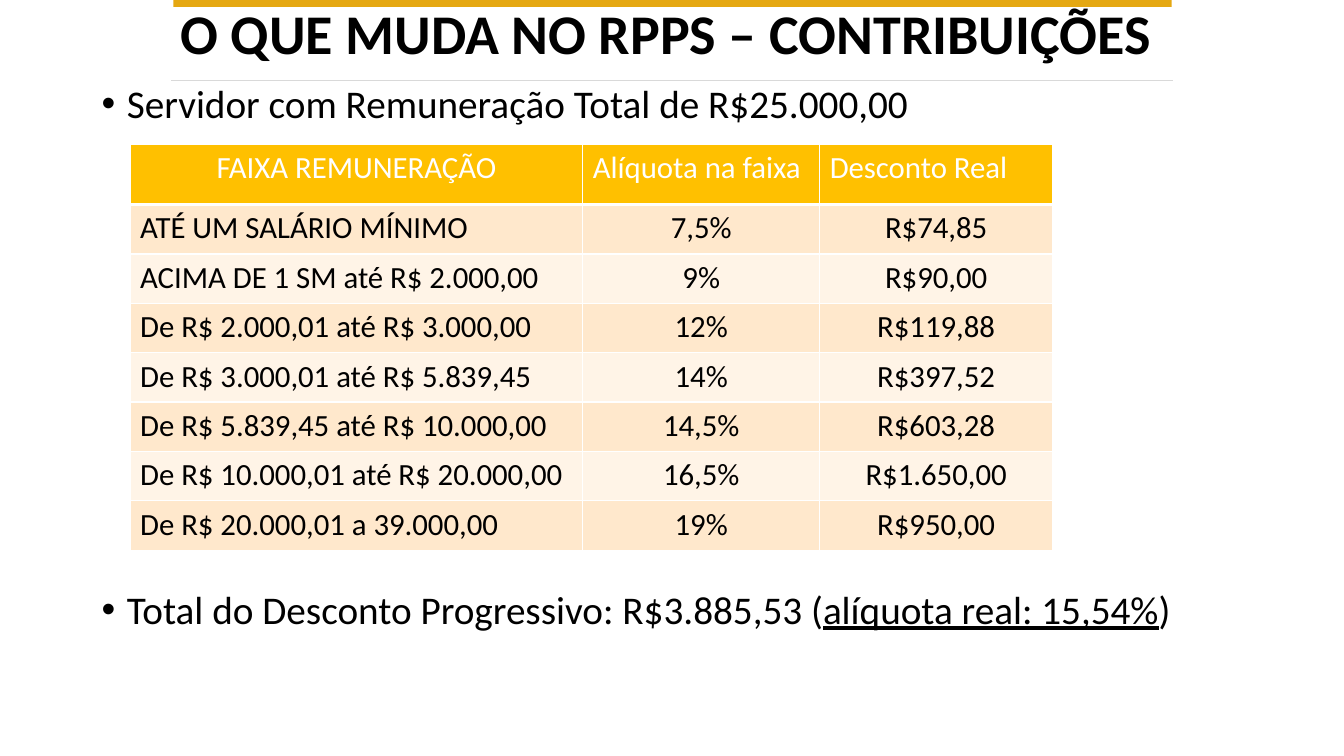
from dataclasses import dataclass

from lxml import etree
from pptx import Presentation
from pptx.dml.color import RGBColor
from pptx.enum.shapes import MSO_CONNECTOR, MSO_SHAPE
from pptx.enum.text import MSO_ANCHOR, PP_ALIGN
from pptx.oxml.ns import qn
from pptx.util import Emu, Inches, Pt

CENTER, LEFT = PP_ALIGN.CENTER, PP_ALIGN.LEFT
TOP = MSO_ANCHOR.TOP
RECTANGLE = MSO_SHAPE.RECTANGLE
STRAIGHT = MSO_CONNECTOR.STRAIGHT


@dataclass(frozen=True)
class Theme:
    font: str = "Calibri"
    title_size: int = 40
    body_size: int = 28
    table_size: int = 22
    text: str = "000000"
    white: str = "FFFFFF"
    accent: str = "E5A812"
    rule: str = "D9D9D9"
    header: str = "FFC000"
    bands: tuple[str, str] = ("FFE8CC", "FFF4E7")


@dataclass(frozen=True)
class Bracket:
    salary_range: str
    rate: str
    discount: str


THEME = Theme()
HEADINGS = Bracket("FAIXA REMUNERAÇÃO", "Alíquota na faixa", "Desconto Real")
BRACKETS = [
    Bracket("ATÉ UM SALÁRIO MÍNIMO", "7,5%", "R$74,85"),
    Bracket("ACIMA DE 1 SM até R$ 2.000,00", "9%", "R$90,00"),
    Bracket("De R$ 2.000,01 até R$ 3.000,00", "12%", "R$119,88"),
    Bracket("De R$ 3.000,01 até R$ 5.839,45", "14%", "R$397,52"),
    Bracket("De R$ 5.839,45 até R$ 10.000,00", "14,5%", "R$603,28"),
    Bracket("De R$ 10.000,01 até R$ 20.000,00", "16,5%", "R$1.650,00"),
    Bracket("De R$ 20.000,01 a 39.000,00", "19%", "R$950,00"),
]
COLUMN_WIDTHS = (4.49, 2.35, 2.31)
HEADER_HEIGHT, ROW_HEIGHT = 0.6, 0.49


def add_span(para, text: str, *, size: int, color: str = THEME.text,
             bold: bool = False, underline: bool = False) -> None:
    span = para.add_run()
    span.text = text
    font = span.font
    font.name, font.size = THEME.font, Pt(size)
    font.bold, font.underline = bold, underline
    font.color.rgb = RGBColor.from_string(color)


def add_text_frame(page, left: float, top: float, width: float, height: float):
    box = page.shapes.add_textbox(Inches(left), Inches(top), Inches(width), Inches(height))
    frame = box.text_frame
    frame.word_wrap = True
    frame.vertical_anchor = TOP
    return frame


def make_bullet(para) -> None:
    properties = para._p.get_or_add_pPr()
    properties.set("marL", str(Inches(0.25)))
    properties.set("indent", str(Inches(-0.25)))
    font = etree.SubElement(properties, qn("a:buFont"))
    font.set("typeface", "Arial")
    etree.SubElement(properties, qn("a:buChar")).set("char", "•")
    para.line_spacing = 0.9


def add_title_band(page) -> None:
    bar = page.shapes.add_shape(RECTANGLE, Inches(1.72), Emu(0), Inches(9.9), Inches(0.07))
    bar.shadow.inherit = False
    bar.fill.solid()
    bar.fill.fore_color.rgb = RGBColor.from_string(THEME.accent)
    bar.line.fill.background()

    rule = page.shapes.add_connector(
        STRAIGHT, Inches(1.7), Inches(0.8), Inches(11.63), Inches(0.8))
    rule.line.color.rgb = RGBColor.from_string(THEME.rule)
    rule.line.width = Pt(0.5)
    etree.SubElement(rule._element.spPr, qn("a:effectLst"))

    para = add_text_frame(page, 0.4, 0.01, 12.53, 0.89).paragraphs[0]
    para.alignment = CENTER
    para.line_spacing = 0.9
    add_span(para, "O QUE MUDA NO RPPS – CONTRIBUIÇÕES ", size=THEME.title_size, bold=True)


def add_body(page) -> None:
    """Write the bullets above and below the table as one text."""
    frame = add_text_frame(page, 0.91, 0.79, 11.22, 5.79)
    salary, total = frame.paragraphs[0], frame.add_paragraph()
    for para in (salary, total):
        make_bullet(para)
    total.space_before = Pt(331)
    size = THEME.body_size
    add_span(salary, "Servidor com Remuneração Total de R$25.000,00", size=size)
    add_span(total, "Total do Desconto Progressivo: R$3.885,53 (", size=size)
    add_span(total, "alíquota real: 15,54%", size=size, underline=True)
    add_span(total, ")", size=size)


def set_borders(cell, widths: dict[str, float]) -> None:
    """Draw white edges; the keys are L, R, T and B, in that order."""
    properties = cell._tc.get_or_add_tcPr()
    for side, width in widths.items():
        edge = etree.SubElement(properties, qn(f"a:ln{side}"))
        edge.set("w", str(Pt(width)))
        fill = etree.SubElement(edge, qn("a:solidFill"))
        etree.SubElement(fill, qn("a:srgbClr")).set("val", THEME.white)


def fill_cell(cell, text: str, *, fill: str, color: str, align: PP_ALIGN,
              top_edge: float = 1, bottom_edge: float = 1) -> None:
    set_borders(cell, {"L": 1, "R": 1, "T": top_edge, "B": bottom_edge})
    cell.fill.solid()
    cell.fill.fore_color.rgb = RGBColor.from_string(fill)
    para = cell.text_frame.paragraphs[0]
    para.alignment = align
    add_span(para, text, size=THEME.table_size, color=color)


def add_bracket_table(page) -> None:
    heights = [HEADER_HEIGHT] + [ROW_HEIGHT] * len(BRACKETS)
    table = page.shapes.add_table(
        len(heights), len(COLUMN_WIDTHS), Inches(1.29), Inches(1.43),
        Inches(sum(COLUMN_WIDTHS)), Inches(sum(heights))).table
    for column, width in zip(table.columns, COLUMN_WIDTHS):
        column.width = Inches(width)
    for row, height in zip(table.rows, heights):
        row.height = Inches(height)

    for index, bracket in enumerate([HEADINGS, *BRACKETS]):
        texts = (bracket.salary_range, bracket.rate, bracket.discount)
        for column, text in enumerate(texts):
            cell = table.cell(index, column)
            if index == 0:
                fill_cell(cell, text, fill=THEME.header, color=THEME.white,
                          align=LEFT if column else CENTER, bottom_edge=3)
            else:
                fill_cell(cell, text, fill=THEME.bands[(index - 1) % 2], color=THEME.text,
                          align=CENTER if column else LEFT, top_edge=3 if index == 1 else 1)


def main() -> None:
    deck = Presentation()
    deck.slide_width, deck.slide_height = Inches(13.33), Inches(7.5)
    page = deck.slides.add_slide(deck.slide_layouts[6])
    add_title_band(page)
    add_body(page)
    add_bracket_table(page)
    deck.save("out.pptx")


if __name__ == "__main__":
    main()
